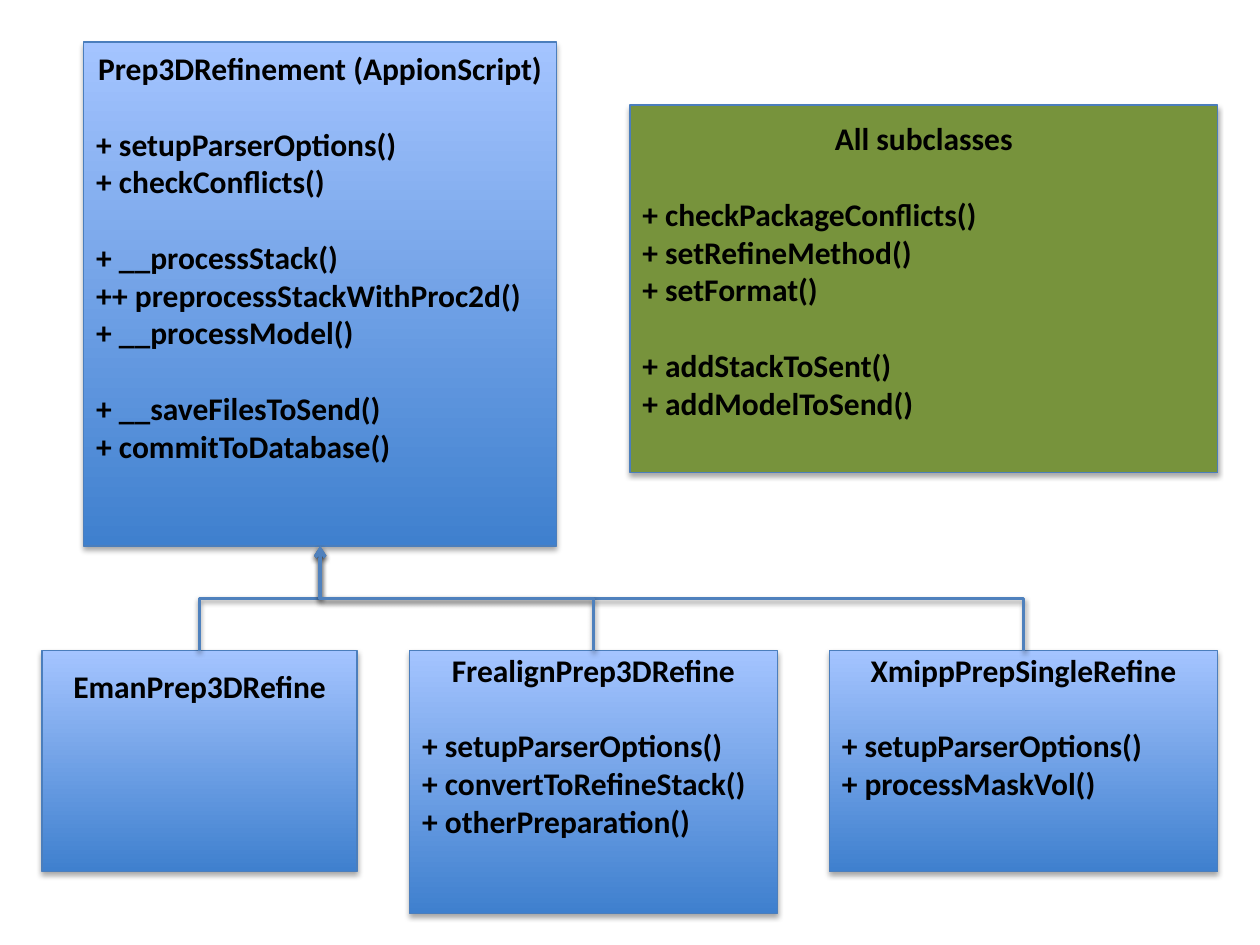
from lxml.etree import SubElement
from pptx import Presentation
from pptx.dml.color import RGBColor
from pptx.enum.shapes import MSO_CONNECTOR, MSO_SHAPE
from pptx.enum.text import MSO_ANCHOR, PP_ALIGN
from pptx.oxml.ns import qn
from pptx.util import Cm, Pt

BLUE_DARK = RGBColor(0x3F, 0x80, 0xCE)
BLUE_LIGHT = RGBColor(0xA4, 0xC4, 0xFF)
GREEN = RGBColor(0x77, 0x93, 0x3C)
BORDER = RGBColor(0x4B, 0x7E, 0xBC)
ARROW = RGBColor(0x4F, 0x81, 0xBD)
BLACK = RGBColor(0, 0, 0)

LINE_HEIGHT = 0.76  # cm, one line of 18 pt text
SUBCLASS_TOP = 13.12

prs = Presentation()
prs.slide_width, prs.slide_height = Cm(25.4), Cm(19.05)
slide = prs.slides.add_slide(prs.slide_layouts[6])


def add_class(name, method_groups, left, top, width, height, rows, color=None):
    """Class box; rows is the line count that is centred in its height."""
    box = slide.shapes.add_shape(MSO_SHAPE.FLOWCHART_PROCESS,
                                 Cm(left), Cm(top), Cm(width), Cm(height))
    # The theme's soft shadow is kept
    if color:
        box.fill.solid()
        box.fill.fore_color.rgb = color
    else:
        box.fill.gradient()
        box.fill.gradient_angle = 90
        for stop, shade in zip(box.fill.gradient_stops, (BLUE_DARK, BLUE_LIGHT)):
            stop.color.rgb = shade
    box.line.color.rgb = BORDER
    box.line.width = Pt(0.75)

    frame = box.text_frame
    frame.word_wrap = True
    frame.vertical_anchor = MSO_ANCHOR.TOP
    frame.margin_top = Cm(max(0, (height - rows * LINE_HEIGHT) / 2))
    frame.margin_bottom = 0
    for group in [[name], *method_groups]:
        for i, text in enumerate(group):
            is_name = text == name
            line = frame.paragraphs[0] if is_name else frame.add_paragraph()
            line.alignment = PP_ALIGN.CENTER if is_name else PP_ALIGN.LEFT
            if i == 0 and not is_name:
                line.space_before = Cm(LINE_HEIGHT)
            run = line.add_run()
            run.text = text
            run.font.name = "Calibri"
            run.font.size = Pt(18)
            run.font.bold = True
            run.font.color.rgb = BLACK
    return box


# Base class
base = add_class(
    "Prep3DRefinement (AppionScript)",
    [["+ setupParserOptions()", "+ checkConflicts()"],
     ["+ __processStack()", "++ preprocessStackWithProc2d()", "+ __processModel()"],
     ["+ __saveFilesToSend()", "+ commitToDatabase()"]],
    1.69, 0.85, 9.53, 10.16, rows=13)

# Subclasses
frealign = add_class(
    "FrealignPrep3DRefine",
    [["+ setupParserOptions()", "+ convertToRefineStack()", "+ otherPreparation()"]],
    8.26, SUBCLASS_TOP, 7.41, 5.29, rows=7)
eman = add_class("EmanPrep3DRefine", [], 0.85, SUBCLASS_TOP, 6.35, 4.45, rows=5)
xmipp = add_class(
    "XmippPrepSingleRefine",
    [["+ setupParserOptions()", "+ processMaskVol()"]],
    16.72, SUBCLASS_TOP, 7.83, 4.45, rows=6)

# Methods shared by all subclasses
add_class(
    "All subclasses",
    [["+ checkPackageConflicts()", "+ setRefineMethod()", "+ setFormat()"],
     ["+ addStackToSent()", "+ addModelToSend()"]],
    12.7, 2.12, 11.85, 7.41, rows=9, color=GREEN)

# Inheritance arrows: elbows turned a quarter so that they leave upwards
base_x, base_y = base.left + base.width // 2, base.top + base.height
for subclass in (eman, xmipp, frealign):
    sub_x = subclass.left + subclass.width // 2
    mid_x, mid_y = (sub_x + base_x) // 2, (subclass.top + base_y) // 2
    half_rise = (subclass.top - base_y) // 2
    half_run = (base_x - sub_x) // 2  # negative when the arrow goes left
    arrow = slide.shapes.add_connector(
        MSO_CONNECTOR.ELBOW, mid_x - half_rise, mid_y - half_run,
        mid_x + half_rise, mid_y + half_run)
    arrow.line.color.rgb = ARROW
    arrow.line.width = Pt(2)
    props = arrow._element.spPr
    props.find(qn("a:xfrm")).set("rot", str(270 * 60000))
    SubElement(props.find(qn("a:ln")), qn("a:tailEnd"), type="arrow")

prs.save("out.pptx")
